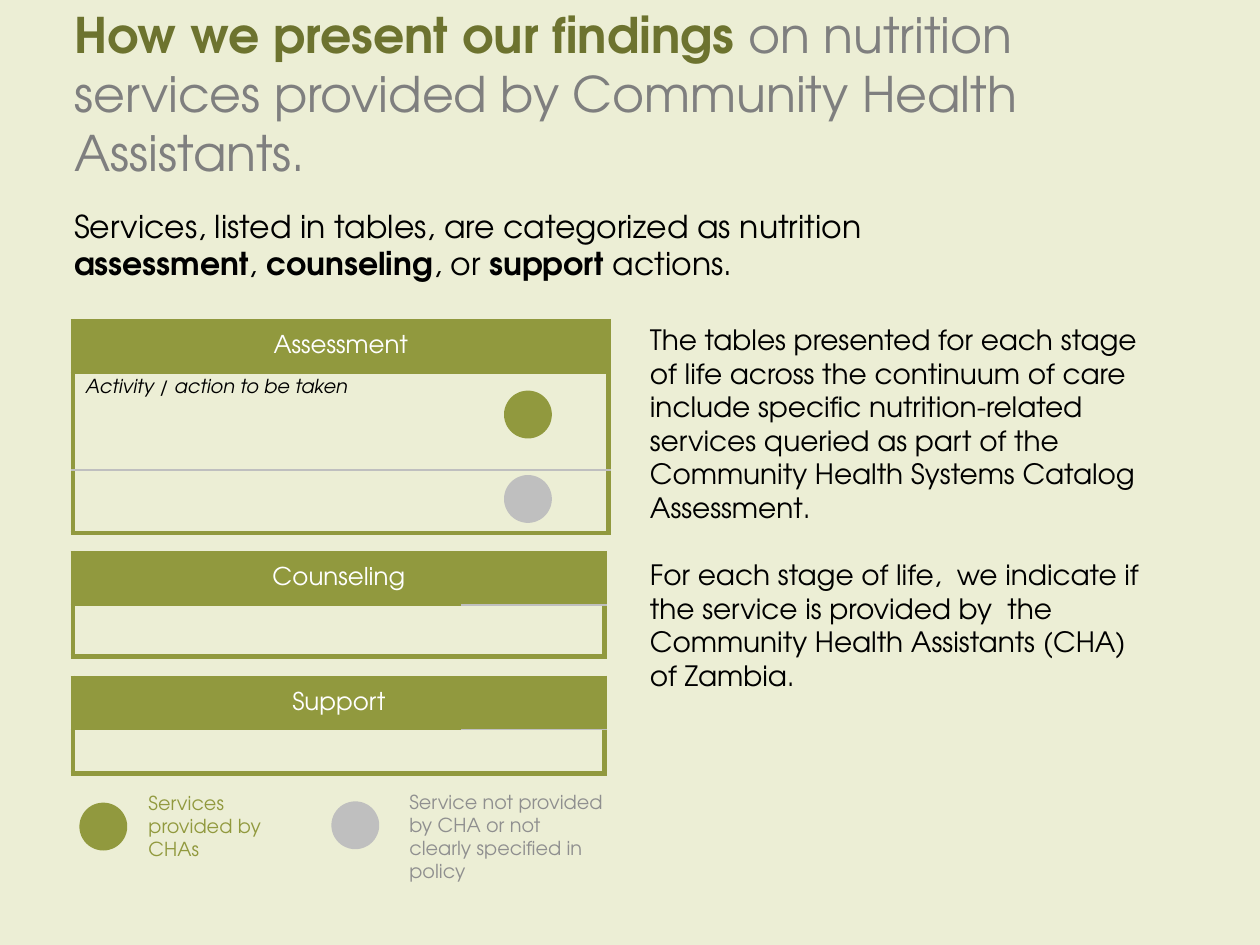
import pptx
import pptx.util
import pptx.dml.color
import pptx.enum.shapes
import pptx.enum.text
import pptx.oxml.ns
import lxml.etree

Inches, Pt = pptx.util.Inches, pptx.util.Pt
ANCHOR = pptx.enum.text.MSO_ANCHOR
FONT = "TeX Gyre Adventor"
GREEN, DARK_GREEN, SILVER = "91993E", "6D732F", "BFBFBF"
BLACK, WHITE, GREY, LEGEND_GREY = "000000", "FFFFFF", "7F7F7F", "8F8F8F"
BACKGROUND = "ECEED5"

# Content: a run is (text, colour, bold); a paragraph is a list of runs
TITLE = [("How we present our findings ", DARK_GREEN, True),
         ("on nutrition services provided by Community Health Assistants.", GREY, False)]
INTRO = [("Services, listed in tables, are categorized as nutrition ", BLACK, False),
         ("assessment", BLACK, True), (", ", BLACK, False),
         ("counseling", BLACK, True), (", or ", BLACK, False),
         ("support ", BLACK, True), ("actions.", BLACK, False)]
EXPLANATION = [
    "The tables presented for each stage of life across the continuum of care include "
    "specific nutrition-related services queried as part of the Community Health Systems "
    "Catalog Assessment.",
    "For each stage of life,  we indicate if the service is provided by  the Community "
    "Health Assistants (CHA) of Zambia.",
]
# Heading, note, top, column widths, body row heights, colour under the right of the header
TABLES = [
    ("Assessment", "Activity / action to be taken", 2.55, (3.25, 1), (0.77, 0.5), GREEN),
    ("Counseling", "", 4.39, (3.08, 1.14), (0.41,), SILVER),
    ("Support", "", 5.38, (3.08, 1.14), (0.35,), SILVER),
]
TABLE_LEFT, HEADER_HEIGHT = 0.58, 0.41
# Left, top, colour
DOT_SIZE = 0.38
DOTS = [(4, 3.1, GREEN), (4, 3.77, SILVER), (0.63, 6.37, GREEN), (2.63, 6.36, SILVER)]
# Text, colour, box
LEGEND = [
    ("Services provided by CHAs", GREEN, (1.08, 6.23, 1.35, 0.66)),
    ("Service not provided by CHA or not clearly specified in policy", LEGEND_GREY,
     (3.15, 6.22, 1.75, 0.66)),
]


def color(value):
    return pptx.dml.color.RGBColor.from_string(value)


def add_run(paragraph, text, size, value, bold=False, italic=False):
    run = paragraph.add_run()
    run.text = text
    font = run.font
    font.name, font.size, font.bold, font.italic = FONT, Pt(size), bold, italic
    font.color.rgb = color(value)


def add_text(slide, box, paragraphs, size, gap=0):
    frame = slide.shapes.add_textbox(*map(Inches, box)).text_frame
    frame.word_wrap = True
    for index, runs in enumerate(paragraphs):
        paragraph = frame.add_paragraph() if index else frame.paragraphs[0]
        paragraph.space_before = Pt(gap if index else 0)
        for text, value, bold in runs:
            add_run(paragraph, text, size, value, bold)


def set_borders(cell, borders):
    properties = cell._tc.get_or_add_tcPr()
    for side in "LRTB":
        value, width = borders.get(side, (None, 0))
        line = lxml.etree.SubElement(properties, pptx.oxml.ns.qn("a:ln" + side),
                                     w=str(Pt(width)))
        if value is None:
            lxml.etree.SubElement(line, pptx.oxml.ns.qn("a:noFill"))
        else:
            fill = lxml.etree.SubElement(line, pptx.oxml.ns.qn("a:solidFill"))
            lxml.etree.SubElement(fill, pptx.oxml.ns.qn("a:srgbClr"), val=value)


def add_service_table(slide, heading, note, top, widths, body_heights, right_rule):
    heights = (HEADER_HEIGHT, *body_heights)
    last = len(heights) - 1
    box = (TABLE_LEFT, top, sum(widths), sum(heights))
    table = slide.shapes.add_table(len(heights), 2, *map(Inches, box)).table
    table.horz_banding = table.first_row = False
    for column, width in zip(table.columns, widths):
        column.width = Inches(width)
    for row, height in zip(table.rows, heights):
        row.height = Inches(height)

    # Thick outer frame, thin rules between rows
    outer, under_header, inner = (GREEN, 3), (GREEN, 1), (SILVER, 1)
    for row in range(len(heights)):
        for column in range(2):
            cell = table.cell(row, column)
            header_rule = (right_rule, 1) if column else under_header
            borders = {"R" if column else "L": outer}
            borders["T"] = outer if row == 0 else header_rule if row == 1 else inner
            borders["B"] = under_header if row == 0 else outer if row == last else inner
            if row == 0:
                borders["L"] = borders["R"] = outer
            set_borders(cell, borders)
            if row == 0:
                cell.fill.solid()
                cell.fill.fore_color.rgb = color(GREEN)
            else:
                cell.fill.background()
            # Small type keeps empty rows at their set height
            lxml.etree.SubElement(cell.text_frame.paragraphs[0]._p,
                                  pptx.oxml.ns.qn("a:endParaRPr"), sz="1100")

    header = table.cell(0, 0)
    header.merge(table.cell(0, 1))
    header.vertical_anchor = ANCHOR.MIDDLE
    paragraph = header.text_frame.paragraphs[0]
    paragraph.alignment = pptx.enum.text.PP_ALIGN.CENTER
    add_run(paragraph, heading, 14, WHITE)
    if note:
        add_run(table.cell(1, 0).text_frame.paragraphs[0], note, 11, BLACK, italic=True)


def add_dot(slide, left, top, value):
    dot = slide.shapes.add_shape(pptx.enum.shapes.MSO_SHAPE.OVAL, Inches(left), Inches(top),
                                 Inches(DOT_SIZE), Inches(DOT_SIZE))
    dot.shadow.inherit = False
    dot.fill.solid()
    dot.fill.fore_color.rgb = color(value)
    dot.line.fill.background()


def add_title(slide):
    title = slide.shapes.title
    title.left, title.top, title.width, title.height = map(Inches, (0.49, 0.4, 8.76, 0.68))
    frame = title.text_frame
    frame.word_wrap = True
    frame.auto_size = pptx.enum.text.MSO_AUTO_SIZE.NONE
    frame.vertical_anchor = ANCHOR.MIDDLE
    paragraph = frame.paragraphs[0]
    paragraph.alignment = pptx.enum.text.PP_ALIGN.LEFT
    for text, value, bold in TITLE:
        add_run(paragraph, text, 28, value, bold)


def main():
    presentation = pptx.Presentation()
    presentation.slide_width, presentation.slide_height = Inches(10), Inches(7.5)
    slide = presentation.slides.add_slide(presentation.slide_layouts[5])
    slide.background.fill.solid()
    slide.background.fill.fore_color.rgb = color(BACKGROUND)

    # Title and text
    add_title(slide)
    add_text(slide, (0.49, 1.59, 7.76, 0.71), [INTRO], 18)
    add_text(slide, (5.06, 2.51, 4.19, 2.52),
             [[(text, BLACK, False)] for text in EXPLANATION], 16, gap=19.2)

    # Tables, markers and legend
    for service_table in TABLES:
        add_service_table(slide, *service_table)
    for dot in DOTS:
        add_dot(slide, *dot)
    for text, value, box in LEGEND:
        add_text(slide, box, [[(text, value, False)]], 11)

    presentation.save("out.pptx")


if __name__ == "__main__":
    main()
